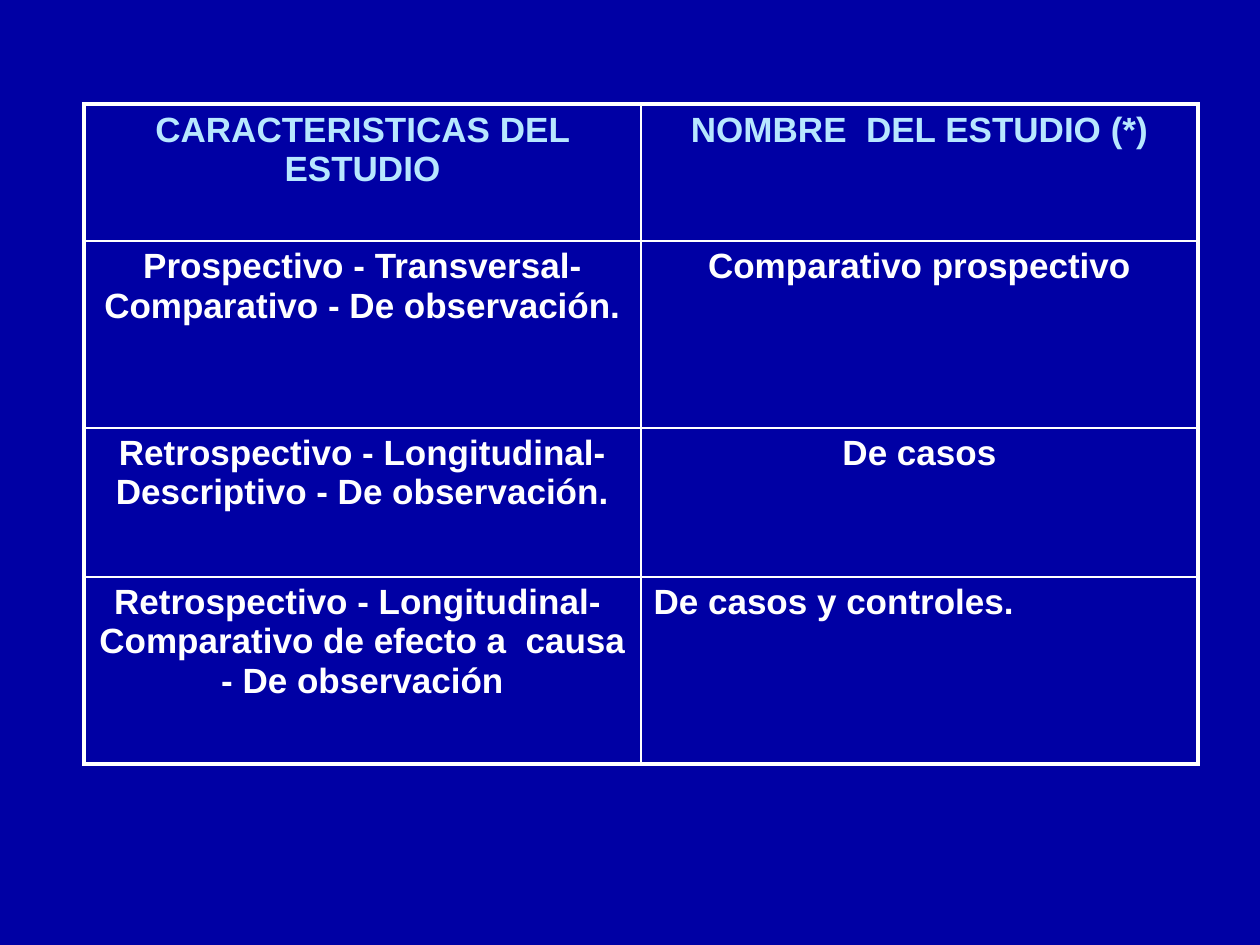
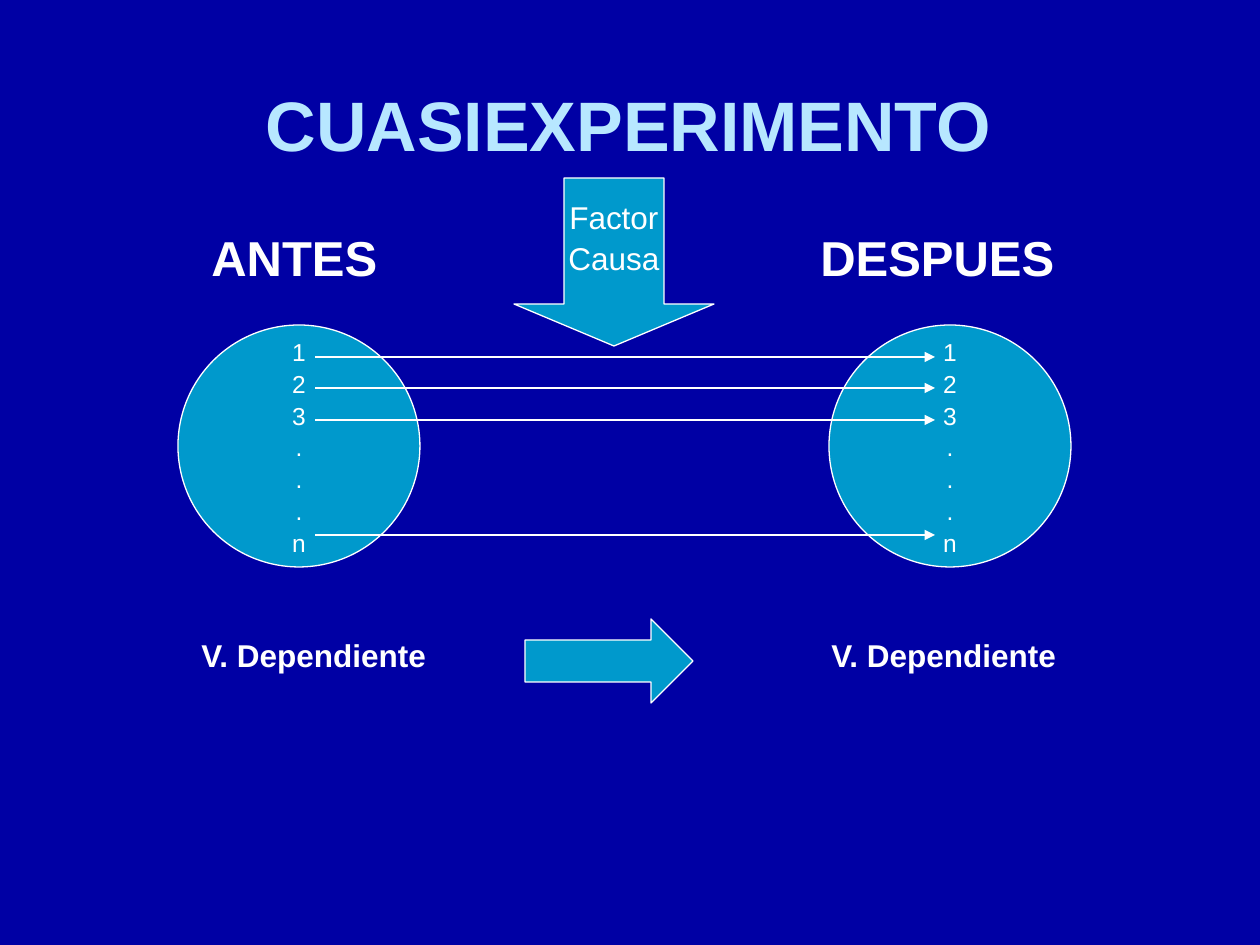
from dataclasses import dataclass

from lxml import etree
from pptx import Presentation
from pptx.dml import color as dml
from pptx.enum import shapes, text
from pptx.oxml import ns
from pptx import util as u

EMU_PER_PX = 914400 / 126


def px(length):
    return u.Emu(round(length * EMU_PER_PX))


@dataclass(frozen=True)
class Theme:
    font: str = "Arial"
    background: str = "0000A4"
    heading: str = "B7E7FF"
    ink: str = "FFFFFF"
    accent: str = "0099CC"
    title_size: int = 40
    label_size: int = 28
    table_size: int = 20
    body_size: int = 18
    item_size: int = 14
    outline: float = 0.75
    grid: float = 1
    frame: float = 2.25


class Painter:
    """Draws styled elements on the current page of a deck."""

    def __init__(self, theme):
        self.theme = theme
        self.deck = Presentation()
        self.deck.slide_width, self.deck.slide_height = px(1260), px(945)
        fill = self.deck.slide_master.background.fill
        fill.solid()
        fill.fore_color.rgb = self.rgb(theme.background)
        self.page = None

    def rgb(self, value):
        return dml.RGBColor.from_string(value)

    def new_page(self, layout_name):
        layout = self.deck.slide_layouts.get_by_name(layout_name)
        self.page = self.deck.slides.add_slide(layout)

    def set_words(self, frame, words, size, color, bold=False,
                  align=text.PP_ALIGN.CENTER, spacing=None):
        frame.text = words
        for para in frame.paragraphs:
            para.alignment = align
            para.line_spacing = spacing
            for span in para.runs:
                span.font.name = self.theme.font
                span.font.size = u.Pt(size)
                span.font.bold = bold
                span.font.color.rgb = self.rgb(color)

    def title(self, words, left, top, width, height):
        box = self.page.shapes.title
        box.left, box.top = px(left), px(top)
        box.width, box.height = px(width), px(height)
        box.text_frame.vertical_anchor = text.MSO_ANCHOR.MIDDLE
        self.set_words(box.text_frame, words, self.theme.title_size,
                       self.theme.heading, bold=True)

    def label(self, words, left, top, height, size):
        box = self.page.shapes.add_textbox(px(left), px(top), px(262), px(height))
        frame = box.text_frame
        frame.word_wrap = True
        frame.auto_size = text.MSO_AUTO_SIZE.SHAPE_TO_FIT_TEXT
        self.set_words(frame, words, size, self.theme.ink, bold=True,
                       align=text.PP_ALIGN.LEFT)

    def shape(self, kind, left, top, width, height, adjustments=()):
        box = self.page.shapes.add_shape(kind, px(left), px(top), px(width), px(height))
        for index, value in enumerate(adjustments):
            box.adjustments[index] = value
        box.shadow.inherit = False
        box.fill.solid()
        box.fill.fore_color.rgb = self.rgb(self.theme.accent)
        self.outline(box.line)
        return box

    def outline(self, line):
        line.color.rgb = self.rgb(self.theme.ink)
        line.width = u.Pt(self.theme.outline)

    def fill_text(self, box, words, size, anchor=text.MSO_ANCHOR.MIDDLE):
        frame = box.text_frame
        frame.word_wrap = False
        frame.vertical_anchor = anchor
        self.set_words(frame, words, size, self.theme.ink, spacing=1.08)

    def arrow(self, start, end, level):
        link = self.page.shapes.add_connector(
            shapes.MSO_CONNECTOR.STRAIGHT, px(start), px(level), px(end), px(level))
        self.outline(link.line)
        properties = link._element.spPr
        etree.SubElement(properties.find(ns.qn("a:ln")), ns.qn("a:tailEnd"),
                         type="triangle")
        etree.SubElement(properties, ns.qn("a:effectLst"))

    def border(self, cell, side, points):
        line = etree.SubElement(cell._tc.get_or_add_tcPr(), ns.qn(f"a:ln{side}"),
                                w=str(u.Pt(points)))
        fill = etree.SubElement(line, ns.qn("a:solidFill"))
        etree.SubElement(fill, ns.qn("a:srgbClr"), val=self.theme.ink)

    def table(self, rows, left, top, column_width, heights):
        last_row, last_column = len(rows) - 1, len(rows[0]) - 1
        holder = self.page.shapes.add_table(
            len(rows), len(rows[0]), px(left), px(top),
            px(column_width * len(rows[0])), px(sum(heights)))
        grid = holder.table
        grid.first_row = grid.horz_banding = False
        for column in grid.columns:
            column.width = px(column_width)
        for r, (words, height) in enumerate(zip(rows, heights)):
            grid.rows[r].height = px(height)
            for c, entry in enumerate(words):
                cell = grid.cell(r, c)
                edges = {"L": c == 0, "R": c == last_column,
                         "T": r == 0, "B": r == last_row}
                for side, outer in edges.items():
                    self.border(cell, side, self.theme.frame if outer else self.theme.grid)
                cell.fill.background()
                self.set_words(cell.text_frame, entry, self.theme.table_size,
                               self.theme.ink if r else self.theme.heading, bold=True)
        return grid


def study_names(painter):
    painter.new_page("Blank")
    rows = [
        ("CARACTERISTICAS DEL ESTUDIO", "NOMBRE  DEL ESTUDIO (*)"),
        ("Prospectivo - Transversal-Comparativo - De observación.",
         "Comparativo prospectivo"),
        ("Retrospectivo - Longitudinal-Descriptivo - De observación.", "De casos"),
        ("Retrospectivo - Longitudinal-  Comparativo de efecto a  causa - De observación",
         "De casos y controles."),
    ]
    grid = painter.table(rows, 84, 104, 557, (137, 187, 149, 187))
    grid.cell(3, 1).text_frame.paragraphs[0].alignment = text.PP_ALIGN.LEFT


def quasi_experiment(painter):
    theme = painter.theme
    kinds = shapes.MSO_SHAPE
    painter.new_page("Title Only")
    painter.title("CUASIEXPERIMENTO", 42, 32, 1173, 182)

    subjects = "\n".join("123...n")
    for circle_left in (178, 829):
        circle = painter.shape(kinds.OVAL, circle_left, 325, 242, 242)
        painter.fill_text(circle, subjects, theme.item_size)
    for level in (357, 388, 420, 535):
        painter.arrow(315, 935, level)

    painter.label("ANTES", 199, 221, 72, theme.label_size)
    painter.label("DESPUES", 808, 221, 72, theme.label_size)
    for label_left in (189, 819):
        painter.label("V. Dependiente", label_left, 630, 50, theme.body_size)

    painter.shape(kinds.RIGHT_ARROW, 525, 619, 168, 84, (0.5, 0.5))
    factor = painter.shape(kinds.DOWN_ARROW, 514, 178, 200, 168, (0.5, 0.25))
    factor.text_frame.margin_top = px(17)
    painter.fill_text(factor, "Factor\nCausa", theme.body_size, text.MSO_ANCHOR.TOP)


def main():
    painter = Painter(Theme())
    study_names(painter)
    quasi_experiment(painter)
    painter.deck.save("out.pptx")


if __name__ == "__main__":
    main()
